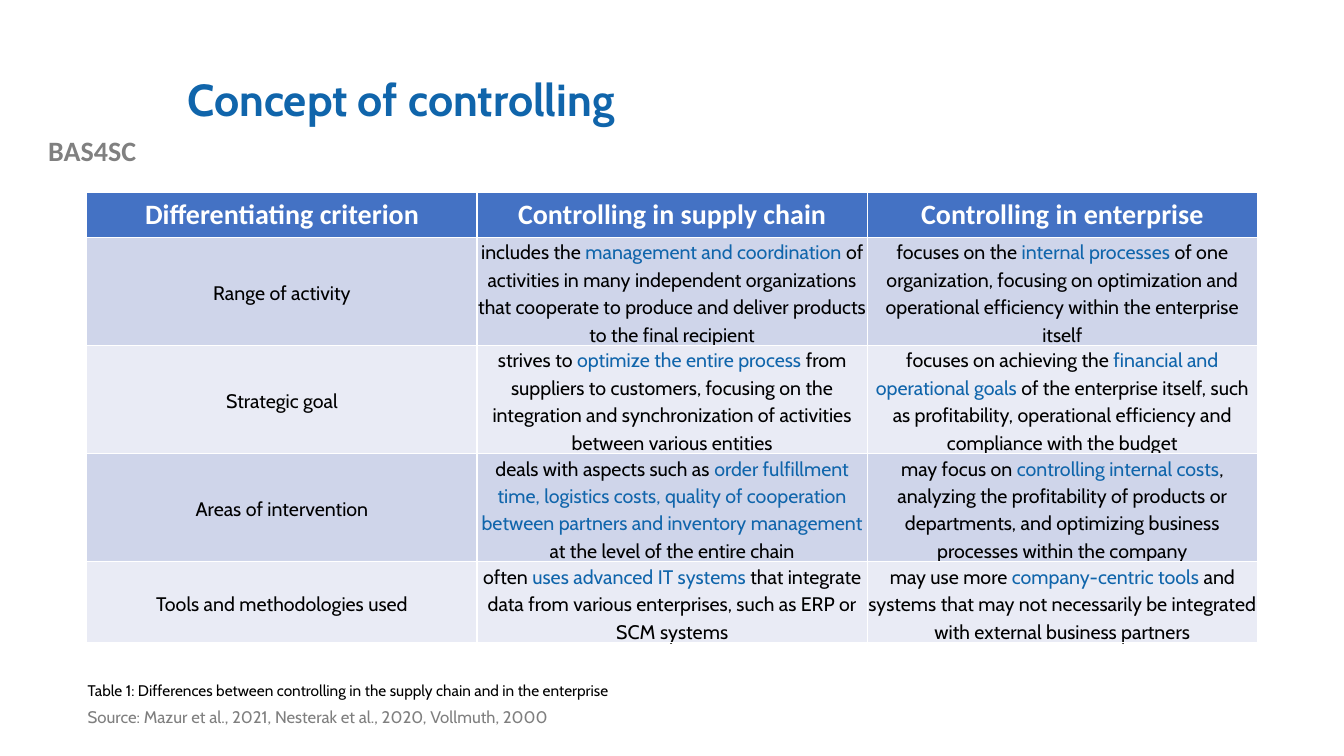
"""Builds the slide comparing controlling in the supply chain and in the enterprise."""
from pptx import Presentation
from pptx.dml.color import RGBColor
from pptx.enum.text import MSO_ANCHOR, PP_ALIGN
from pptx.util import Cm, Pt

CENTER, LEFT = PP_ALIGN.CENTER, PP_ALIGN.LEFT
MIDDLE, TOP = MSO_ANCHOR.MIDDLE, MSO_ANCHOR.TOP

COLORS = {
    "blue": "1065AB",
    "header": "4472C4",
    "odd_row": "CFD5EA",
    "even_row": "E9EBF5",
    "label": "808080",
    "source": "7F7F7F",
    "white": "FFFFFF",
    "black": "000000",
}


def style(paragraph, size, color, font="Cabin", bold=False, align=LEFT, spacing=None):
    paragraph.alignment = align
    paragraph.line_spacing = spacing
    paragraph.font.name = font
    paragraph.font.size = Pt(size)
    paragraph.font.bold = bold
    if color:
        paragraph.font.color.rgb = RGBColor.from_string(COLORS[color])


def add_text(text, left, top, width, height, size, color, anchor=TOP, **look):
    frame = slide.shapes.add_textbox(Cm(left), Cm(top), Cm(width), Cm(height)).text_frame
    frame.word_wrap = True
    frame.vertical_anchor = anchor
    frame.text = text
    style(frame.paragraphs[0], size, color, **look)


presentation = Presentation()
presentation.slide_width = Cm(33.87)
presentation.slide_height = Cm(19.05)
slide = presentation.slides.add_slide(presentation.slide_layouts[6])

add_text("BAS4SC", 0, 3.25, 4.65, 1.12, 20, "label", font="Calibri", bold=True, align=CENTER)
add_text("Concept of controlling", 4.47, 1.02, 27.08, 3.1, 32, "blue",
         anchor=MIDDLE, bold=True, spacing=0.9)
add_text("Source: Mazur et al., 2021, Nesterak et al., 2020, Vollmuth, 2000",
         1.96, 17.78, 14.68, 0.66, 12, "source", spacing=0.8)

headings = ["Differentiating criterion", "Controlling in supply chain", "Controlling in enterprise"]
criteria = [
    ("Range of activity",
     ("includes the ", "management and coordination ",
      "of activities in many independent organizations that cooperate to produce "
      "and deliver products to the final recipient"),
     ("focuses on the ", "internal processes ",
      "of one organization, focusing on optimization and operational efficiency "
      "within the enterprise itself")),
    ("Strategic goal",
     ("strives to ", "optimize the entire process ",
      "from suppliers to customers, focusing on the integration and synchronization "
      "of activities between various entities"),
     ("focuses on achieving the", " financial and operational goals",
      " of the enterprise itself, such as profitability, operational efficiency "
      "and compliance with the budget")),
    ("Areas of intervention",
     ("deals with aspects such as ",
      "order fulfillment time, logistics costs, quality of cooperation between partners "
      "and inventory management ",
      "at the level of the entire chain"),
     ("may focus on ", "controlling internal costs",
      ", analyzing the profitability of products or departments, and optimizing "
      "business processes within the company")),
    ("Tools and methodologies used",
     ("often ", "uses advanced IT systems",
      " that integrate data from various enterprises, such as ERP or SCM systems"),
     ("may use more ", "company-centric tools ",
      "and systems that may not necessarily be integrated with external business partners")),
]
row_heights = [1.13, 2.54, 2.54, 2.54, 1.88]

comparison = slide.shapes.add_table(
    len(row_heights), len(headings), Cm(2.19), Cm(4.85), Cm(29.5), Cm(sum(row_heights))).table
for row, height in zip(comparison.rows, row_heights):
    row.height = Cm(height)

for column, heading in enumerate(headings):
    cell = comparison.cell(0, column)
    cell.fill.solid()
    cell.fill.fore_color.rgb = RGBColor.from_string(COLORS["header"])
    cell.text = heading
    style(cell.text_frame.paragraphs[0], 20, "white", font="Calibri", bold=True, align=CENTER)

for row_number, (criterion, *descriptions) in enumerate(criteria, start=1):
    band = "odd_row" if row_number % 2 else "even_row"
    for column, parts in enumerate([(criterion,), *descriptions]):
        cell = comparison.cell(row_number, column)
        cell.fill.solid()
        cell.fill.fore_color.rgb = RGBColor.from_string(COLORS[band])
        cell.vertical_anchor = MIDDLE
        cell.margin_left = cell.margin_right = cell.margin_top = cell.margin_bottom = 0
        paragraph = cell.text_frame.paragraphs[0]
        style(paragraph, 14, None, align=CENTER, spacing=1.15)
        paragraph.space_after = Pt(6)
        for part, color in zip(parts, ("black", "blue", "black")):
            run = paragraph.add_run()
            run.text = part
            run.font.color.rgb = RGBColor.from_string(COLORS[color])

add_text("Table 1: Differences between controlling in the supply chain and in the enterprise",
         1.96, 17.04, 27.71, 0.74, 11, "black")

presentation.save("out.pptx")
